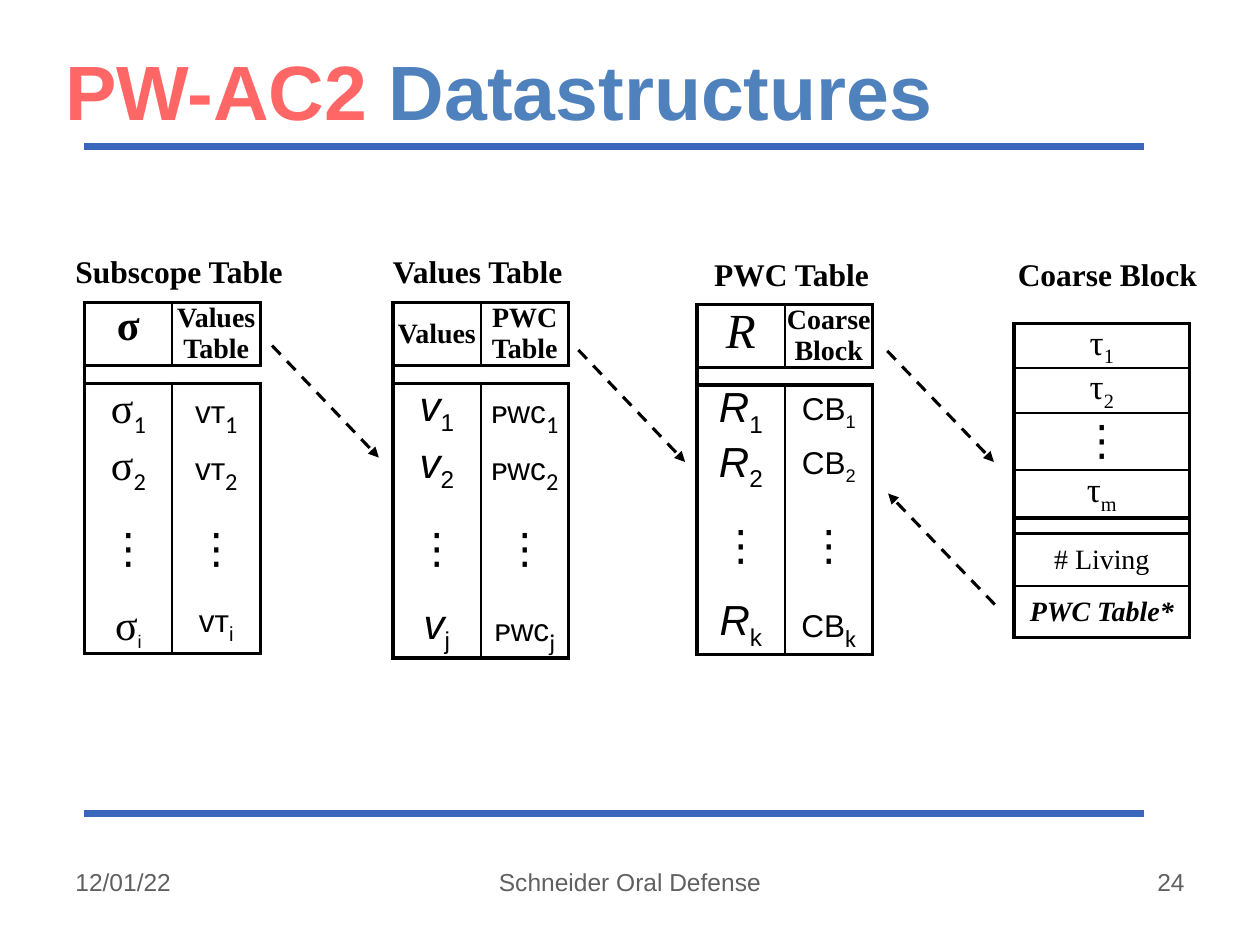
from lxml import etree
from pptx import Presentation
from pptx import util as u
from pptx.dml.color import RGBColor
from pptx.enum import dml, shapes, text
from pptx.oxml.ns import qn

COLORS = {"rule": "3A65BC", "accent": "FF6666", "title": "4F81BD",
          "footer": "606060", "ink": "000000"}
SERIF, SANS, SUB = "Times New Roman", "Arial", "Calibri"
TOP, MIDDLE = text.MSO_ANCHOR.TOP, text.MSO_ANCHOR.MIDDLE
LEFT, CENTER, RIGHT = text.PP_ALIGN.LEFT, text.PP_ALIGN.CENTER, text.PP_ALIGN.RIGHT
THICK, THIN = 2.25, 1.5

# Spans are (text, size, font, style); style letters: b bold, i italic, _ subscript
DOTS = (MIDDLE, [("⋮", 24, SANS, "")])
EMPTY = (TOP, [])


def head(words, size=16, style="b", anchor=TOP):
    return anchor, [(words, size, SERIF, style)]


def sigma(index, size=24, font=SUB, anchor=TOP):
    return anchor, [("σ", 24, SERIF, ""), (index, size, font, "_")]


def letter(name, index):
    return TOP, [(name, 24, SANS, "i"), (index, 24, SANS, "_")]


def entry(name, index, size=24, font=SUB, anchor=TOP):
    return anchor, [(name, 18, SANS, ""), (index, size, font, "_")]


def tau(index):
    return MIDDLE, [("τ", 20, SERIF, ""), (index, 20, SERIF, "_")]


# Tables: left, top, column widths, row heights, thick row edges, thin row edges, cells
PAIR = [50.25, 50.25]
TABLES = [
    (48.25, 173, PAIR, [36, 10, 32.5, 32.5, 59.5, 30], {0, 1, 2, 6}, set(), [
        [head("σ", 24), head("Values Table")],
        [EMPTY, EMPTY],
        [sigma("1"), entry("ᴠᴛ", "1")],
        [sigma("2"), entry("ᴠᴛ", "2")],
        [DOTS, DOTS],
        [sigma("i", 18, SANS, MIDDLE), entry("ᴠᴛ", "i", 20, SANS)]]),
    (224.5, 173, PAIR, [36, 10, 32.5, 32.5, 59.5, 32.5], {0, 1, 2, 6}, set(), [
        [head("Values", anchor=MIDDLE), head("PWC Table")],
        [EMPTY, EMPTY],
        [letter("v", "1"), entry("ᴘᴡᴄ", "1")],
        [letter("v", "2"), entry("ᴘᴡᴄ", "2")],
        [DOTS, DOTS],
        [letter("v", "j"), entry("ᴘᴡᴄ", "j")]]),
    (398.25, 174, PAIR, [36, 10, 31, 31, 59.5, 32.5], {0, 1, 2, 6}, set(), [
        [head("R", 28, "i"), head("Coarse Block")],
        [EMPTY, EMPTY],
        [letter("R", "1"), entry("CB", "1", 18, SANS, MIDDLE)],
        [letter("R", "2"), entry("CB", "2", 18, SANS, MIDDLE)],
        [DOTS, DOTS],
        [letter("R", "k"), entry("CB", "k")]]),
    (579.5, 185, [100.25], [25.5, 25.5, 32.5, 27.5, 9, 29.75, 29.75],
     {0, 4, 7}, {1, 2, 3, 5, 6}, [
        [tau("1")], [tau("2")], [DOTS], [tau("m")], [EMPTY],
        [head("# Living", style="", anchor=MIDDLE)],
        [head("PWC Table*", style="bi", anchor=MIDDLE)]]),
]
# Labels: words, left, top, width, height, span format, alignment
CAPTION, FOOTER = (18, SERIF, "b", "ink"), (14, SANS, "", "footer")
LABELS = [
    ("Subscope Table", 36, 140.5, 134, 29, CAPTION, LEFT),
    ("Values Table", 217.5, 140.5, 114, 29, CAPTION, LEFT),
    ("PWC Table", 401, 142, 114, 29, CAPTION, LEFT),
    ("Coarse Block", 574.5, 142, 123, 29, CAPTION, LEFT),
    ("12/01/22", 36, 492, 168, 37.5, FOOTER, LEFT),
    ("Schneider Oral Defense", 246, 492, 228, 37.5, FOOTER, CENTER),
    ("24", 516, 492, 168, 37.5, FOOTER, RIGHT),
]
RULES = [(48, 84, 654, 84), (48, 465, 654, 465)]
ARROWS = [(155.5, 197.5, 216.5, 261.5), (330.5, 200, 391.5, 264),
          (507, 200.5, 568, 264), (568.5, 345.5, 507.5, 282)]


def add_span(para, words, size, font, style, color="ink"):
    span = para.add_run()
    span.text = words
    span.font.size, span.font.name = u.Pt(size), font
    span.font.bold, span.font.italic = "b" in style, "i" in style
    span.font.color.rgb = RGBColor.from_string(COLORS[color])
    if "_" in style:
        span.font._element.set("baseline", "-25000")


def add_line(page, ends, color, width):
    line = page.shapes.add_connector(shapes.MSO_CONNECTOR.STRAIGHT, *map(u.Pt, ends))
    line.line.color.rgb = RGBColor.from_string(COLORS[color])
    line.line.width = u.Pt(width)
    etree.SubElement(line._element.spPr, qn("a:effectLst"))
    return line


def set_borders(cell, widths):
    props = cell._tc.get_or_add_tcPr()
    for side, width in zip("LRTB", widths):
        edge = etree.SubElement(props, qn(f"a:ln{side}"), w=str(u.Pt(width)))
        if width:
            fill = etree.SubElement(edge, qn("a:solidFill"))
            etree.SubElement(fill, qn("a:srgbClr"), val=COLORS["ink"])
        else:
            etree.SubElement(edge, qn("a:noFill"))


def fill_cell(cell, anchor, spans):
    cell.margin_left = cell.margin_right = cell.margin_top = cell.margin_bottom = 0
    cell.vertical_anchor = anchor
    para = cell.text_frame.paragraphs[0]
    para.alignment = CENTER
    for span in spans:
        add_span(para, *span)
    if not spans:  # keeps the separator row low
        etree.SubElement(para._p, qn("a:endParaRPr"), sz="600")


def add_grid(page, left, top, widths, heights, thick, thin, rows):
    frame = page.shapes.add_table(len(heights), len(widths), u.Pt(left), u.Pt(top),
                                  u.Pt(sum(widths)), u.Pt(sum(heights)))
    table = frame.table
    table.first_row = table.horz_banding = False
    for column, width in zip(table.columns, widths):
        column.width = u.Pt(width)
    for row, height in zip(table.rows, heights):
        row.height = u.Pt(height)

    def edge(index):
        return THICK if index in thick else THIN if index in thin else 0

    last = len(widths) - 1
    for r, row in enumerate(rows):
        separator = row[0] is EMPTY
        inner = 0 if separator else THIN
        for c, content in enumerate(row):
            cell = table.cell(r, c)
            set_borders(cell, (inner if c else THICK, inner if c < last else THICK,
                               edge(r), edge(r + 1)))
            cell.fill.background()
            fill_cell(cell, *content)
        if separator and last:
            table.cell(r, 0).merge(table.cell(r, last))


def main():
    deck = Presentation()
    deck.slide_width, deck.slide_height = u.Pt(720), u.Pt(540)
    page = deck.slides.add_slide(deck.slide_layouts[5])

    # Title and rules
    for ends in RULES:
        add_line(page, ends, "rule", 4)
    title = page.shapes.title
    title.left, title.top, title.width, title.height = map(u.Pt, (30, 24, 648, 54))
    title.text_frame.vertical_anchor = MIDDLE
    para = title.text_frame.paragraphs[0]
    para.alignment = LEFT
    add_span(para, "PW-AC2 ", 44, SANS, "b", "accent")
    add_span(para, "Datastructures", 44, SANS, "b", "title")

    # Tables
    for table in TABLES:
        add_grid(page, *table)

    # Captions and footer
    for words, left, top, width, height, style, align in LABELS:
        box = page.shapes.add_textbox(*map(u.Pt, (left, top, width, height)))
        box.text_frame.word_wrap = True
        para = box.text_frame.paragraphs[0]
        para.alignment = align
        add_span(para, words, *style)

    # Dashed arrows between tables
    for ends in ARROWS:
        arrow = add_line(page, ends, "ink", 1.75)
        arrow.line.dash_style = dml.MSO_LINE.DASH
        etree.SubElement(arrow.line._get_or_add_ln(), qn("a:tailEnd"), type="triangle")

    deck.save("out.pptx")


if __name__ == "__main__":
    main()
